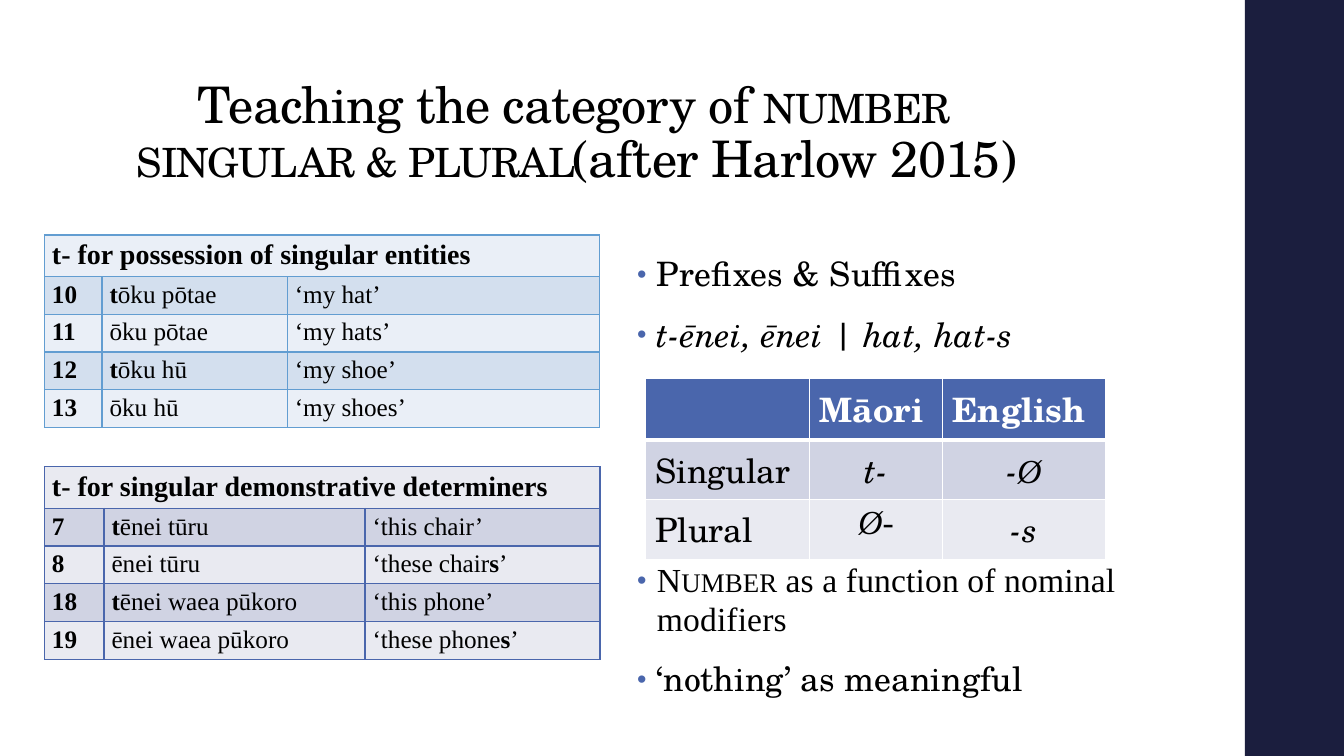
from dataclasses import dataclass, replace

from lxml import etree
from pptx import Presentation
from pptx.dml.color import RGBColor
from pptx.enum.shapes import MSO_SHAPE
from pptx.enum.text import MSO_ANCHOR, MSO_AUTO_SIZE, PP_ALIGN
from pptx.oxml.ns import qn
from pptx.util import Cm, Pt

CENTER, LEFT = PP_ALIGN.CENTER, PP_ALIGN.LEFT
TOP, BOTTOM = MSO_ANCHOR.TOP, MSO_ANCHOR.BOTTOM
RECTANGLE, NO_FIT = MSO_SHAPE.RECTANGLE, MSO_AUTO_SIZE.NONE

COLORS = {
    "black": "000000", "white": "FFFFFF", "navy": "1B1E3E",
    "blue": "4A66AC", "sky": "629DD1",
    "sky_dark": "D3DFEE", "sky_light": "EAEFF7",
    "blue_dark": "D0D3E3", "blue_light": "E9EAF1",
}
SCHOLA, TIMES = "TeX Gyre Schola", "Times New Roman"


@dataclass(frozen=True)
class Style:
    font: str
    size: int
    color: str = "black"
    bold: bool = False
    italic: bool = False
    small_caps: bool = False
    tracking: int = 0


@dataclass(frozen=True)
class Span:
    text: str
    style: Style


@dataclass(frozen=True)
class Bullet:
    spans: list[Span]
    space_before: int = 14


@dataclass(frozen=True)
class Cell:
    spans: list[Span]
    fill: str
    align: PP_ALIGN = LEFT


@dataclass(frozen=True)
class Grid:
    left: float
    top: float
    columns: list[float]
    rows: list[float]
    cells: list[list[Cell]]
    border: str
    title_row: bool = False
    compact: bool = False


TITLE = Style(SCHOLA, 36, tracking=-50)
TITLE_CAPS = replace(TITLE, small_caps=True)
BODY = Style(SCHOLA, 24, tracking=10)
BODY_ITALIC = replace(BODY, italic=True)
BODY_TIMES = replace(BODY, font=TIMES)
PLAIN = Style(TIMES, 18)
BOLD = replace(PLAIN, bold=True)
CAPTION = replace(BOLD, size=20)
LABEL = Style(SCHOLA, 24)
HEADER = replace(LABEL, color="white", bold=True)
AFFIX = replace(LABEL, italic=True)
ZERO = replace(AFFIX, font=TIMES)


def rgb(name: str) -> RGBColor:
    return RGBColor.from_string(COLORS[name])


def add_spans(para, spans: list[Span]) -> None:
    for span in spans:
        run = para.add_run()
        run.text = span.text
        style = span.style
        run.font.name, run.font.size = style.font, Pt(style.size)
        run.font.bold, run.font.italic = style.bold, style.italic
        run.font.color.rgb = rgb(style.color)
        properties = run.font._element
        if style.small_caps:
            properties.set("cap", "small")
        if style.tracking:
            properties.set("spc", str(style.tracking))


def place(box, left: float, top: float, width: float, height: float, anchor: MSO_ANCHOR):
    """Move a placeholder and return its text frame with fixed size."""
    box.left, box.top, box.width, box.height = Cm(left), Cm(top), Cm(width), Cm(height)
    frame = box.text_frame
    frame.word_wrap, frame.auto_size, frame.vertical_anchor = True, NO_FIT, anchor
    return frame


def add_bullet(para, bullet: Bullet) -> None:
    para.alignment, para.line_spacing = LEFT, 0.95
    para.space_before, para.space_after = Pt(bullet.space_before), Pt(2)
    properties = para._p.get_or_add_pPr()
    properties.set("marL", str(Cm(0.5)))
    properties.set("indent", str(-Cm(0.5)))
    color = etree.SubElement(properties, qn("a:buClr"))
    etree.SubElement(color, qn("a:srgbClr")).set("val", COLORS["blue"])
    etree.SubElement(properties, qn("a:buSzPct")).set("val", "80000")
    etree.SubElement(properties, qn("a:buChar")).set("char", "•")
    add_spans(para, bullet.spans)


def set_borders(cell, color: str, bottom: int) -> None:
    properties = cell._tc.get_or_add_tcPr()
    for side, width in {"L": 1, "R": 1, "T": 1, "B": bottom}.items():
        line = etree.SubElement(properties, qn(f"a:ln{side}"))
        line.set("w", str(Pt(width)))
        fill = etree.SubElement(line, qn("a:solidFill"))
        etree.SubElement(fill, qn("a:srgbClr")).set("val", COLORS[color])


def add_grid(page, grid: Grid) -> None:
    table = page.shapes.add_table(
        len(grid.rows), len(grid.columns), Cm(grid.left), Cm(grid.top),
        Cm(sum(grid.columns)), Cm(sum(grid.rows))).table
    table.first_row = table.horz_banding = False
    for column, width in zip(table.columns, grid.columns):
        column.width = Cm(width)
    for row, height in zip(table.rows, grid.rows):
        row.height = Cm(height)
    for r, entries in enumerate(grid.cells):
        for c, entry in enumerate(entries):
            cell = table.cell(r, c)
            heavy = r == 0 and not grid.title_row
            set_borders(cell, grid.border, 3 if heavy else 1)
            cell.fill.solid()
            cell.fill.fore_color.rgb = rgb(entry.fill)
            para = cell.text_frame.paragraphs[0]
            para.alignment = entry.align
            if grid.compact:
                cell.margin_left = cell.margin_right = Cm(0.19)
                cell.margin_top = cell.margin_bottom = 0
                para.line_spacing = 1.15
            add_spans(para, entry.spans)
    if grid.title_row:
        table.cell(0, 0).merge(table.cell(0, len(grid.columns) - 1))


def marked(text: str) -> list[Span]:
    """Split text at asterisks; every second part is bold."""
    return [Span(part, BOLD if i % 2 else PLAIN)
            for i, part in enumerate(text.split("*")) if part]


def example_grid(top: float, columns: list[float], caption: str,
                 examples: list[tuple[str, str, str]], border: str, tint: str) -> Grid:
    light, dark = f"{tint}_light", f"{tint}_dark"
    cells = [[Cell([Span(caption, CAPTION)], light), Cell([], light), Cell([], light)]]
    for i, example in enumerate(examples):
        cells.append([Cell(marked(text), light if i % 2 else dark) for text in example])
    rows = [1.05] + [0.95] * len(examples)
    return Grid(1.12, top, columns, rows, cells, border, title_row=True, compact=True)


POSSESSION = example_grid(5.92, [1.45, 4.67, 7.87], "t- for possession of singular entities", [
    ("*10*", "*t*ōku pōtae", "‘my hat’"), ("*11*", "ōku pōtae", "‘my hats’"),
    ("*12*", "*t*ōku hū", "‘my shoe’"), ("*13*", "ōku hū", "‘my shoes’")], "sky", "sky")
DETERMINERS = example_grid(11.76, [1.5, 6.58, 5.92], "t- for singular demonstrative determiners", [
    ("*7*", "*t*ēnei tūru", "‘this chair’"), ("*8*", "ēnei tūru", "‘these chair*s*’"),
    ("*18*", "*t*ēnei waea pūkoro", "‘this phone’"),
    ("*19*", "ēnei waea pūkoro", "‘these phone*s*’")], "blue", "blue")
AFFIXES = Grid(16.26, 9.53, [4.14, 3.35, 4.11], [1.5] * 3, [
    [Cell([], "blue"), Cell([Span("Māori", HEADER)], "blue"),
     Cell([Span("English", HEADER)], "blue")],
    [Cell([Span("Singular", LABEL)], "blue_dark"), Cell([Span("t-", AFFIX)], "blue_dark", CENTER),
     Cell([Span("-", AFFIX), Span("Ø", ZERO)], "blue_dark", CENTER)],
    [Cell([Span("Plural", LABEL)], "blue_light"), Cell([Span("Ø-", ZERO)], "blue_light", CENTER),
     Cell([Span("-s", AFFIX)], "blue_light", CENTER)]], "white")
BULLETS = [
    Bullet([Span("Prefixes & Suffixes", BODY)]),
    Bullet([Span("t-ēnei, ēnei ", BODY_ITALIC), Span("| ", BODY), Span("hat, hat-s", BODY_ITALIC)]),
    Bullet([Span("Number ", replace(BODY_TIMES, small_caps=True)),
            Span("as a function of nominal modifiers", BODY_TIMES)], space_before=146),
    Bullet([Span("‘nothing’ as meaningful", BODY)]),
]


def main() -> None:
    deck = Presentation()
    deck.slide_width, deck.slide_height = Cm(33.87), Cm(19.05)
    page = deck.slides.add_slide(deck.slide_layouts[1])

    sidebar = page.shapes.add_shape(RECTANGLE, Cm(31.37), 0, Cm(2.5), Cm(19.05))
    sidebar.shadow.inherit = False
    sidebar.fill.solid()
    sidebar.fill.fore_color.rgb = rgb("navy")
    sidebar.line.fill.background()

    heading = place(page.shapes.title, 0.74, 0.99, 27.58, 3.89, BOTTOM).paragraphs[0]
    heading.alignment, heading.line_spacing = CENTER, 0.9
    add_spans(heading, [Span("Teaching the category of ", TITLE), Span("number ", TITLE_CAPS)])
    heading.add_line_break()
    add_spans(heading, [Span("singular & plural ", TITLE_CAPS), Span("(after Harlow 2015)", TITLE)])

    body = place(page.placeholders[1], 15.8, 6.32, 14, 12.01, TOP)
    for i, bullet in enumerate(BULLETS):
        add_bullet(body.add_paragraph() if i else body.paragraphs[0], bullet)

    for grid in (POSSESSION, DETERMINERS, AFFIXES):
        add_grid(page, grid)
    deck.save("out.pptx")


if __name__ == "__main__":
    main()
